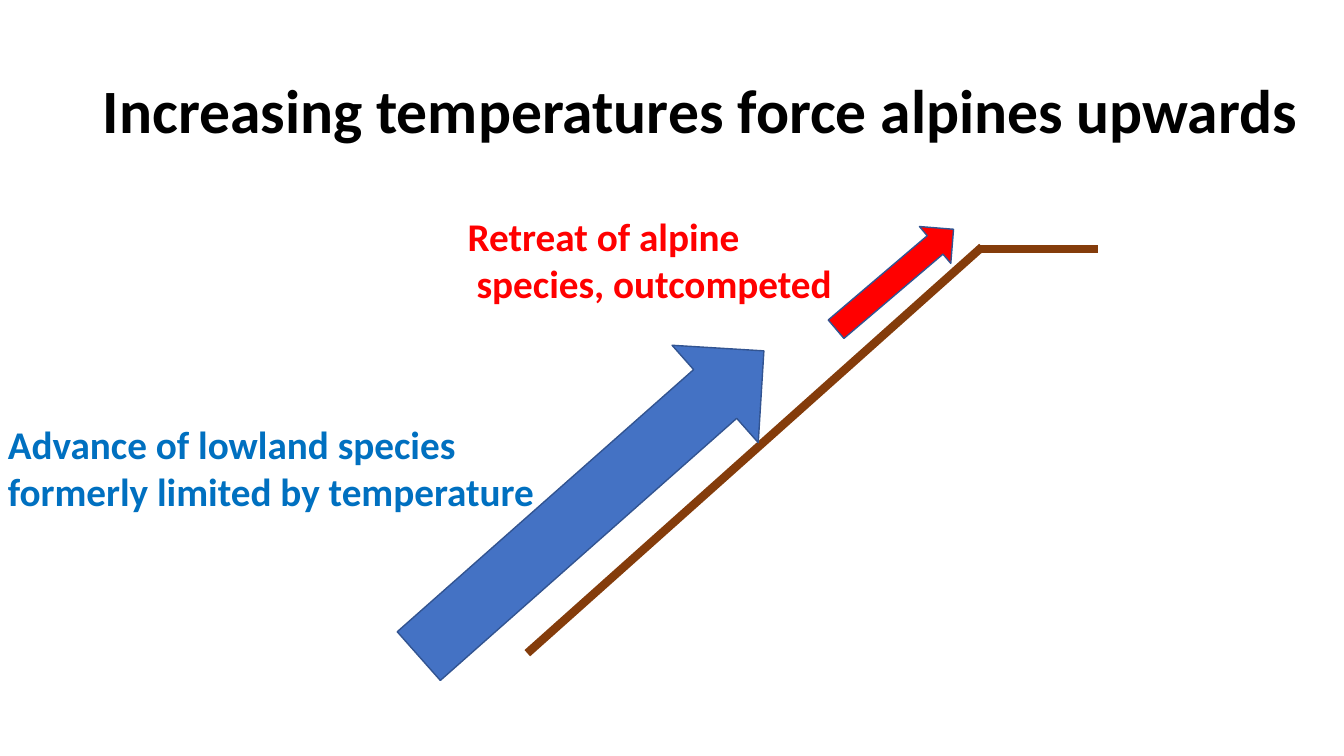
from pptx import Presentation
from pptx.dml.color import RGBColor
from pptx.enum.shapes import MSO_CONNECTOR, MSO_SHAPE
from pptx.enum.text import MSO_ANCHOR, MSO_AUTO_SIZE, PP_ALIGN
from pptx.oxml.ns import qn
from pptx.util import Inches, Pt
from lxml.etree import SubElement

COLORS = {
    "title": "000000",
    "slope": "843C0B",
    "lowland_arrow": "4472C4",
    "lowland_text": "0070C0",
    "alpine": "FF0000",
    "outline": "325491",
}
FONT = "Calibri"


def color(name):
    return RGBColor.from_string(COLORS[name])


def place(shape, box):
    shape.left, shape.top, shape.width, shape.height = (Inches(length) for length in box)


def format_text(frame, size, color_name):
    for para in frame.paragraphs:
        para.alignment = PP_ALIGN.LEFT
        for span in para.runs:
            span.font.name = FONT
            span.font.size = Pt(size)
            span.font.bold = True
            span.font.color.rgb = color(color_name)


def add_title(page, box, text):
    title = page.shapes.title
    place(title, box)
    frame = title.text_frame
    frame.text = text
    frame.word_wrap = True
    frame.auto_size = MSO_AUTO_SIZE.NONE
    frame.vertical_anchor = MSO_ANCHOR.MIDDLE
    frame.paragraphs[0].line_spacing = 0.9
    format_text(frame, 44, "title")


def add_slope_line(page, start, end):
    points = [Inches(length) for length in (*start, *end)]
    line = page.shapes.add_connector(MSO_CONNECTOR.STRAIGHT, *points)
    line.line.color.rgb = color("slope")
    line.line.width = Pt(6)
    SubElement(line._element.spPr, qn("a:effectLst"))


def add_mountain(page, box):
    left, top, width, height = box
    summit_width = 1.18
    summit_left = left + width - summit_width
    add_slope_line(page, (summit_left + 0.03, top), (left, top + height))
    add_slope_line(page, (summit_left, top + 0.02), (left + width, top + 0.02))


def add_label(page, box, text, color_name, wrap):
    label = page.shapes.add_textbox(*(Inches(length) for length in box))
    frame = label.text_frame
    frame.text = text
    frame.word_wrap = wrap
    frame.auto_size = MSO_AUTO_SIZE.SHAPE_TO_FIT_TEXT
    format_text(frame, 28, color_name)


def add_uphill_arrow(page, box, rotation, color_name):
    bounds = (Inches(length) for length in box)
    arrow = page.shapes.add_shape(MSO_SHAPE.RIGHT_ARROW, *bounds)
    arrow.rotation = rotation
    arrow.shadow.inherit = False
    arrow.fill.solid()
    arrow.fill.fore_color.rgb = color(color_name)
    arrow.line.color.rgb = color("outline")
    arrow.line.width = Pt(1)


def main():
    deck = Presentation()
    deck.slide_width = Inches(13.33)
    deck.slide_height = Inches(7.5)
    page = deck.slides.add_slide(deck.slide_layouts[5])

    add_title(page, (0.92, 0.4, 12.22, 1.45), "Increasing temperatures force alpines upwards")
    add_mountain(page, (5.23, 2.45, 5.66, 4.03))
    add_uphill_arrow(page, (3.58, 4.35, 4.57, 1.29), 318.5, "lowland_arrow")
    add_label(page, (-0.02, 4.12, 5.57, 1.04),
              "Advance of lowland species\nformerly limited by temperature",
              "lowland_text", False)
    add_uphill_arrow(page, (8.11, 2.53, 1.53, 0.48), 319.6, "alpine")
    add_label(page, (4.54, 2.06, 3.85, 1.04),
              "Retreat of alpine\n species, outcompeted", "alpine", True)

    deck.save("out.pptx")


if __name__ == "__main__":
    main()
